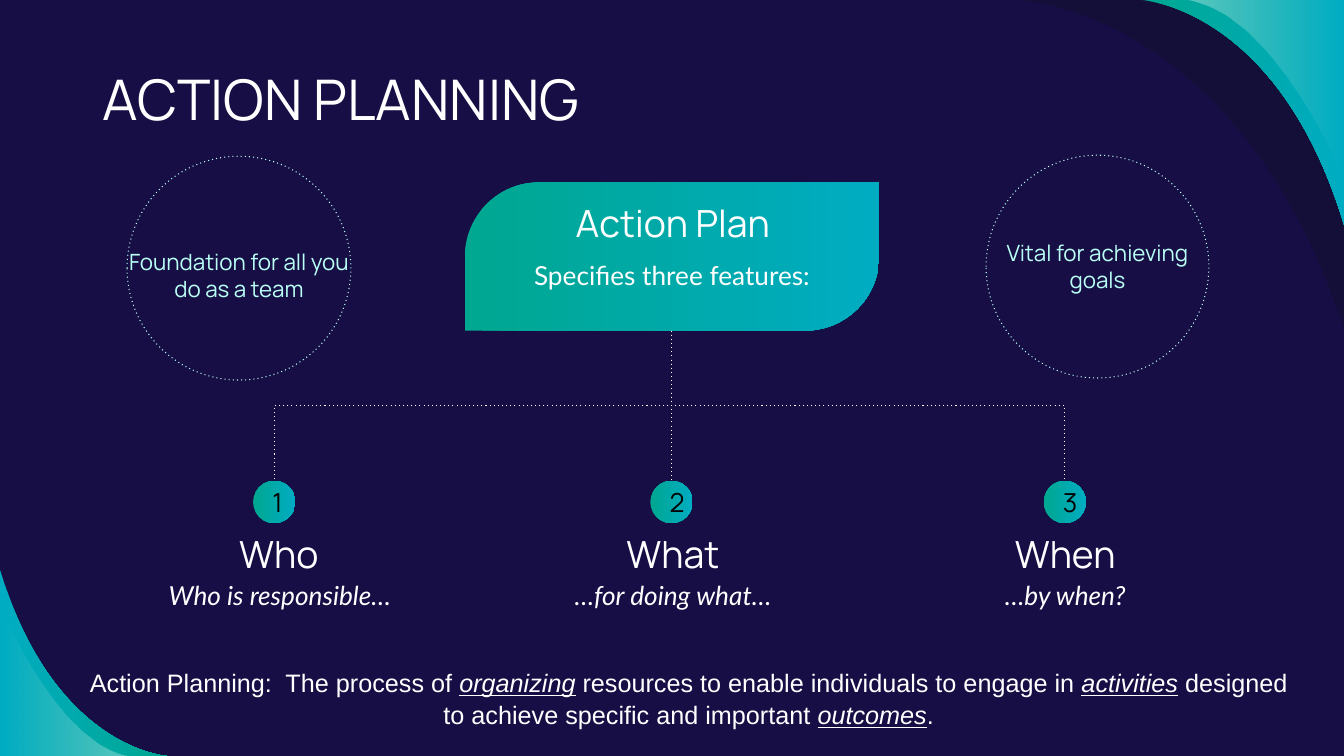
from lxml.etree import SubElement
from pptx import Presentation
from pptx.dml.color import RGBColor
from pptx.enum.dml import MSO_LINE_DASH_STYLE as Dash
from pptx.enum.shapes import MSO_CONNECTOR as Link, MSO_SHAPE as Preset
from pptx.enum.text import MSO_ANCHOR as Anchor, MSO_AUTO_SIZE as Fit, PP_ALIGN as Align
from pptx.oxml.ns import qn
from pptx.util import Pt

# Content; all lengths are px, 100 to the inch
PX = 9144
WIDTH, HEIGHT = 1333, 750
COLORS = {"night": "160E44", "shade": "12102F", "white": "FFFFFF",
          "mint": "BAFFF6", "green": "00A791", "blue": "00ACC2", "black": "000000"}
TITLE = "ACTION PLANNING"
PLAN = {"at": (461, 181, 411, 147), "heading": "Action Plan",
        "heading_at": (545, 197, 245, 59),
        "detail": "Specifies three features:", "detail_at": (461, 244, 411, 81)}
# heading, detail, centre of number, left and width of heading, left of detail
FEATURES = [
    ("Who", "Who is responsible…", 272, 189, 175, 122),
    ("What", "…for doing what…", 666, 555, 225, 512),
    ("When", "…by when?", 1056, 969, 175, 901),
]
# circle place, text, text place
RINGS = [
    ((126, 155, 222, 222), "Foundation for all you do as a team", (107, 227, 260, 91)),
    ((978, 154, 221, 221), "Vital for achieving goals", (978, 219, 221, 90)),
]
DEFINITION = [
    ("Action Planning:  The process of ", False), ("organizing", True),
    (" resources to enable individuals to engage in ", False), ("activities", True),
    (" designed to achieve specific and important ", False), ("outcomes", True),
    (".", False),
]
# four Bézier points, corner, stops from left to right as (colour, opacity)
BRAND = [("green", 100), ("blue", 100)]
GLOW = [("white", 36), ("white", 0)]
CORNERS = [
    ([(166, 750), (166, 750), (54, 744), (0, 565)], (0, 750), BRAND[::-1]),
    ([(0, 601), (0, 601), (56, 741), (132, 750)], (0, 750), GLOW[::-1]),
    ([(1333, 326), (1229, 10), (1012, 0), (1012, 0)], (1333, 0), [("shade", 54)]),
    ([(1132, 0), (1132, 0), (1268, 7), (1333, 223)], (1333, 0), BRAND),
    ([(1333, 180), (1333, 180), (1266, 11), (1174, 0)], (1333, 0), GLOW),
]
NUMBER_TOP, NUMBER_SIZE = 477, 42

deck = Presentation()
deck.slide_width, deck.slide_height = WIDTH * PX, HEIGHT * PX
page = deck.slides.add_slide(deck.slide_layouts.get_by_name("Comparison"))
shapes = page.shapes


def rgb(name):
    return RGBColor.from_string(COLORS[name])


def emu(*lengths):
    return [round(length * PX) for length in lengths]


def paint(shape, stops):
    """Fill with one colour or a left-to-right gradient, without outline."""
    shape.shadow.inherit = False
    shape.line.fill.background()
    if len(stops) == 1:
        shape.fill.solid()
        shape.fill.fore_color.rgb = rgb(stops[0][0])
    else:
        shape.fill.gradient()
        shape.fill.gradient_angle = 0
        for stop, (name, _) in zip(shape.fill.gradient_stops, stops):
            stop.color.rgb = rgb(name)
    tags = list(shape.element.spPr.iter(qn("a:srgbClr")))
    for tag, (_, opacity) in zip(tags, stops):
        if opacity < 100:
            SubElement(tag, qn("a:alpha")).set("val", str(opacity * 1000))


def dot_line(shape, name):
    shape.line.color.rgb = rgb(name)
    shape.line.width = Pt(0.75)
    shape.line.dash_style = Dash.ROUND_DOT
    next(shape.element.spPr.iter(qn("a:prstDash"))).set("val", "dot")


def bend(shape):
    """Turn the first three straight segments into one Bézier curve."""
    lines = list(shape.element.spPr.iter(qn("a:lnTo")))[:3]
    lines[0].tag = qn("a:cubicBezTo")
    for line in lines[1:]:
        lines[0].append(line[0])
        line.getparent().remove(line)


def write(box, spans, size, font="Manrope", color="white", align=Align.CENTER,
          anchor=Anchor.TOP, italic=False, spacing=1.0, inset=13):
    """Write a string, or (text, emphasised) pairs, as one paragraph."""
    frame = box.text_frame
    frame.word_wrap, frame.auto_size = True, Fit.NONE
    frame.vertical_anchor = anchor
    frame.margin_left = frame.margin_right = inset * PX
    frame.margin_top = frame.margin_bottom = inset * PX
    para = frame.paragraphs[0]
    para.alignment, para.line_spacing = align, spacing
    para.space_before = para.space_after = Pt(0)
    props = para._p.get_or_add_pPr()
    props.set("marL", "0")
    props.set("indent", "0")
    SubElement(props, qn("a:buNone"))
    for text, strong in [(spans, False)] if isinstance(spans, str) else spans:
        span = para.add_run()
        span.text = text
        span.font.size, span.font.name = Pt(size), font
        span.font.color.rgb = rgb(color)
        span.font.bold = False
        span.font.italic = italic or strong
        span.font.underline = strong


def place(box, at):
    """Move a placeholder and bring it to the front."""
    box.left, box.top, box.width, box.height = emu(*at)
    shapes.element.append(box.element)
    return box


def text_box(at, spans, size, **style):
    write(shapes.add_textbox(*emu(*at)), spans, size, **style)


headings = [box for box in shapes.placeholders if box.placeholder_format.idx in (1, 2, 3, 4)]


def add_heading(at, text):
    write(place(headings.pop(0), at), text, 26.7, anchor=Anchor.BOTTOM)


# Background and corner waves
page.background.fill.solid()
page.background.fill.fore_color.rgb = rgb("night")
for curve, corner, stops in CORNERS:
    builder = shapes.build_freeform(*emu(*curve[0]), scale=1.0)
    builder.add_line_segments([emu(*point) for point in curve[1:] + [corner]], close=True)
    wave = builder.convert_to_shape()
    bend(wave)
    paint(wave, stops)

# Title
write(place(shapes.title, (89, 51, 1026, 92)), TITLE, 40, align=Align.LEFT)

# Action plan panel
panel = shapes.add_shape(Preset.ROUND_2_DIAG_RECTANGLE, *emu(*PLAN["at"]))
panel.adjustments[0], panel.adjustments[1] = 0.5, 0
paint(panel, BRAND)
text_box(PLAN["detail_at"], PLAN["detail"], 18.7, font="Lato")
add_heading(PLAN["heading_at"], PLAN["heading"])

# Features, each linked to the panel
trunk_x, trunk_top = 666, PLAN["at"][1] + PLAN["at"][3]
drop = NUMBER_TOP - trunk_top
for number, (heading, detail, center, left, width, detail_left) in enumerate(FEATURES, 1):
    reach = center - trunk_x
    if reach:
        # An elbow is drawn sideways about its centre, then turned to run down
        side = 1 if reach > 0 else -1
        mid_x, mid_y = (trunk_x + center) / 2, trunk_top + drop / 2
        half_x, half_y = side * drop / 2, abs(reach) / 2
        link = shapes.add_connector(Link.ELBOW, *emu(mid_x + half_x, mid_y - half_y,
                                                     mid_x - half_x, mid_y + half_y))
        link.element.spPr.xfrm.set("rot", str((180 + 90 * side) * 60000))
    else:
        link = shapes.add_connector(Link.STRAIGHT, *emu(center, trunk_top, center, NUMBER_TOP))
    dot_line(link, "white")
    SubElement(link.element.spPr, qn("a:effectLst"))

    disc = shapes.add_shape(Preset.OVAL, *emu(center - NUMBER_SIZE / 2, NUMBER_TOP,
                                              NUMBER_SIZE, NUMBER_SIZE))
    paint(disc, BRAND)
    write(disc, str(number), 18.7, color="black", anchor=Anchor.MIDDLE)
    text_box((detail_left, 562, 311, 97), detail, 18.7, font="Lato", italic=True)
    add_heading((left, 519, width, 65), heading)

# Dotted rings
for ring_at, text, text_at in RINGS:
    ring = shapes.add_shape(Preset.OVAL, *emu(*ring_at))
    ring.shadow.inherit = False
    ring.fill.background()
    dot_line(ring, "mint")
    text_box(text_at, text, 16, color="mint", anchor=Anchor.MIDDLE)

# Definition
text_box((74, 658, 1218, 71), DEFINITION, 18, font="Arial", spacing=1.07, inset=2)

deck.save("out.pptx")
